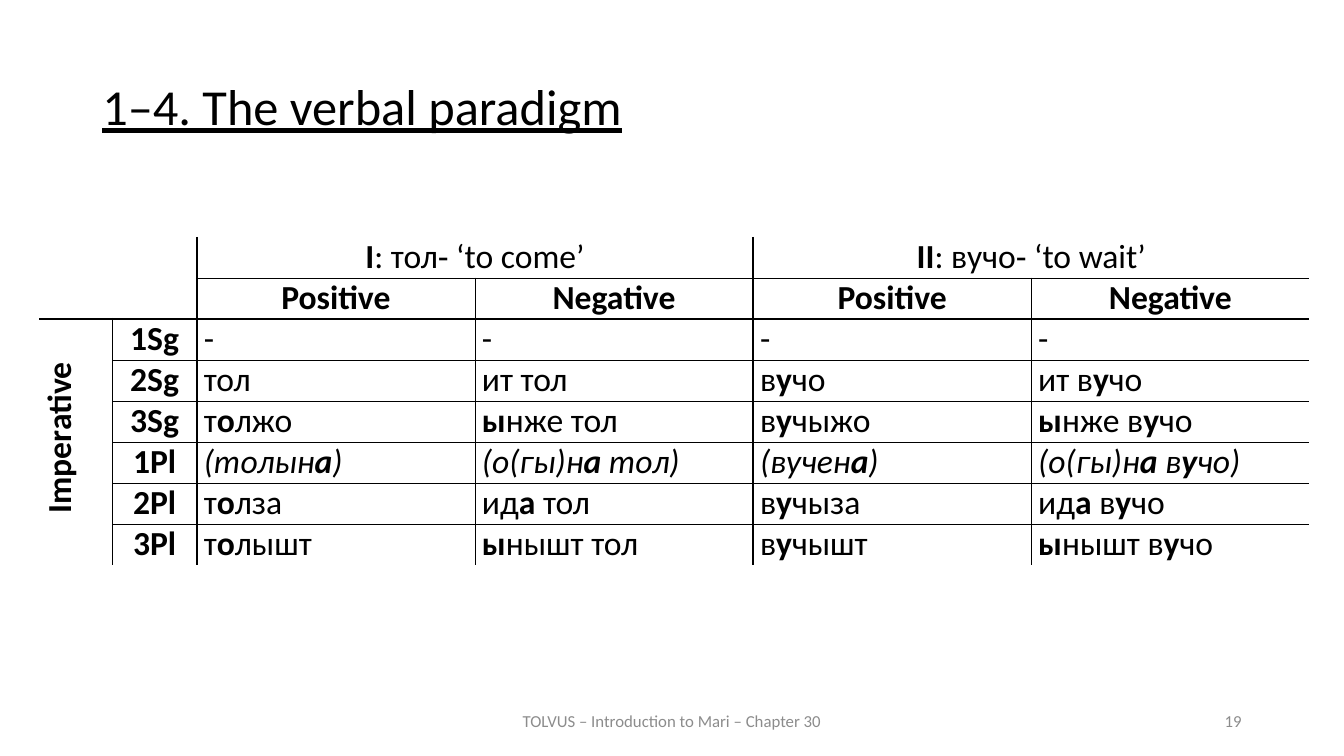
from lxml import etree
from pptx import Presentation
from pptx.dml.color import RGBColor
from pptx.enum.text import MSO_ANCHOR, PP_ALIGN
from pptx.oxml.ns import qn
from pptx.util import Pt

BLACK = RGBColor(0, 0, 0)
GRAY = RGBColor(0x8C, 0x8C, 0x8C)
LEFT, MID, RIGHT, FULL = PP_ALIGN.LEFT, PP_ALIGN.CENTER, PP_ALIGN.RIGHT, PP_ALIGN.JUSTIFY
TOP, CENTER = MSO_ANCHOR.TOP, MSO_ANCHOR.MIDDLE
FONT = "Calibri"
THIN, THICK = 0.5, 1.5

COLS = [52.2, 60.3] + [198.7] * 4
ROW_H = 29.3
HEAD = 2  # heading rows, and also label columns

# Asterisks switch bold on and off
ROWS = [
    ["", "", "*I*: тол‑ ‘to come’", "", "*II*: вучо‑ ‘to wait’", ""],
    ["", ""] + ["*Positive*", "*Negative*"] * 2,
    ["*Imperative*", "*1Sg*"] + ["-"] * 4,
    ["", "*2Sg*", "тол", "ит тол", "в*у*чо", "ит в*у*чо"],
    ["", "*3Sg*", "т*о*лжо", "*ы*нже тол", "в*у*чыжо", "*ы*нже в*у*чо"],
    ["", "*1Pl*", "(толын*а*)", "(о(гы)н*а *тол)", "(вучен*а*)", "(о(гы)н*а *в*у*чо)"],
    ["", "*2Pl*", "т*о*лза", "ид*а* тол", "в*у*чыза", "ид*а* в*у*чо"],
    ["", "*3Pl*", "т*о*лышт", "*ы*нышт тол", "в*у*чышт", "*ы*нышт в*у*чо"],
]


def style(font, size, color, bold=False, italic=False):
    font.name, font.size = FONT, Pt(size)
    font.color.rgb = color
    font.bold, font.italic = bold, italic


def add_text(slide, box, text, size, color, align, anchor):
    frame = slide.shapes.add_textbox(*map(Pt, box)).text_frame
    frame.word_wrap = True
    frame.vertical_anchor = anchor
    frame.text = text
    para = frame.paragraphs[0]
    para.alignment = align
    style(para.runs[0].font, size, color)
    return para


def fill_cell(cell, text, align):
    cell.margin_left = cell.margin_right = Pt(5)
    cell.margin_top = cell.margin_bottom = 0
    para = cell.text_frame.paragraphs[0]
    para.alignment = align
    style(para.font, 24, BLACK)
    for i, part in enumerate(text.split("*")):
        if part:
            run = para.add_run()
            run.text = part
            style(run.font, 24, BLACK, i % 2 == 1, text.startswith("("))


def upright(x, row):
    """Width of the rule at column edge x beside a row."""
    if x in (2, 4):
        return THICK
    first = {1: HEAD, 3: 1, 5: 1}.get(x, len(ROWS))
    return THIN if row >= first else 0


def level(y, col):
    """Width of the rule at row edge y beside a column."""
    if y == HEAD:
        return THICK
    if y in (0, len(ROWS)):
        return 0
    return THIN if col >= (HEAD if y < HEAD else 1) else 0


def add_rule(cell, side, width):
    line = etree.SubElement(cell._tc.get_or_add_tcPr(), qn("a:ln" + side))
    if not width:
        etree.SubElement(line, qn("a:noFill"))
        return
    line.set("w", str(Pt(width)))
    fill = etree.SubElement(line, qn("a:solidFill"))
    etree.SubElement(fill, qn("a:srgbClr")).set("val", str(BLACK))


def add_rules(cell, row, col):
    wide = cell.span_width if cell.is_merge_origin else 1
    tall = cell.span_height if cell.is_merge_origin else 1
    add_rule(cell, "L", upright(col, row))
    add_rule(cell, "R", upright(col + wide, row))
    add_rule(cell, "T", level(row, col))
    add_rule(cell, "B", level(row + tall, col))
    cell.fill.background()


def add_verbs(slide):
    table = slide.shapes.add_table(
        len(ROWS), len(COLS), Pt(28.1), Pt(169.2),
        Pt(sum(COLS)), Pt(ROW_H * len(ROWS))).table
    table.first_row = table.horz_banding = False
    for col, width in zip(table.columns, COLS):
        col.width = Pt(width)
    for row in table.rows:
        row.height = Pt(ROW_H)

    # Joined cells
    for col in (2, 4):
        table.cell(0, col).merge(table.cell(0, col + 1))
    mood = table.cell(HEAD, 0)
    mood.merge(table.cell(len(ROWS) - 1, 0))

    # Words and rules
    for r, row in enumerate(ROWS):
        for c, text in enumerate(row):
            cell = table.cell(r, c)
            fill_cell(cell, text, MID if r < HEAD or c < HEAD else FULL)
            add_rules(cell, r, c)

    # Upward label
    mood._tc.get_or_add_tcPr().set("vert", "vert270")
    mood.text_frame.paragraphs[0]._p.get_or_add_pPr().set("marL", str(Pt(5.7)))


def main():
    deck = Presentation()
    deck.slide_width, deck.slide_height = Pt(960), Pt(540)
    slide = deck.slides.add_slide(deck.slide_layouts[6])

    # Title
    title = add_text(slide, (66, 54.7, 828, 60), "1–4. The verbal paradigm",
                     36, BLACK, FULL, TOP)
    title.line_spacing = 0.9
    title.runs[0].font.underline = True

    # Paradigm
    add_verbs(slide)

    # Footer
    add_text(slide, (318, 500.5, 324, 28.75),
             "TOLVUS – Introduction to Mari – Chapter 30", 12, GRAY, MID, CENTER)
    add_text(slide, (678, 500.5, 216, 28.75), "19", 12, GRAY, RIGHT, CENTER)
    deck.save("out.pptx")


if __name__ == "__main__":
    main()
